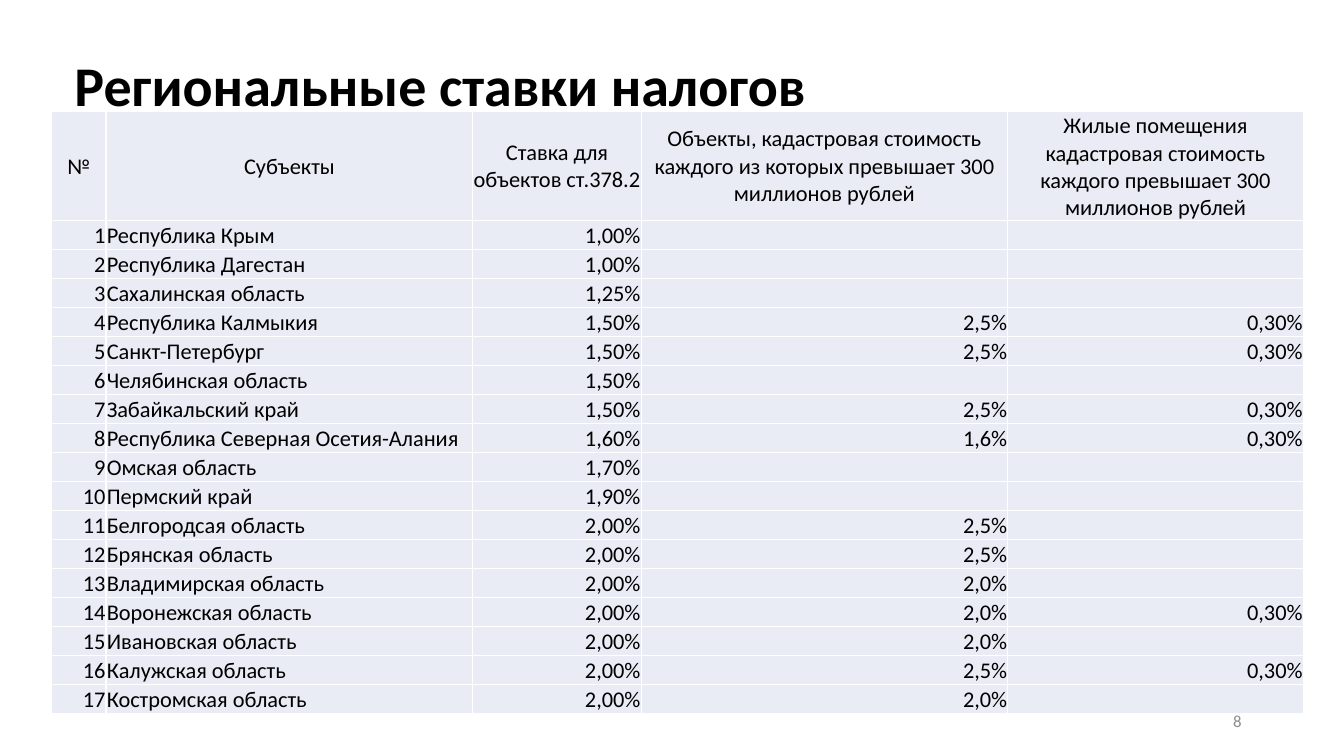
import pptx
import pptx.dml.color
import pptx.enum.text
import pptx.oxml.ns
import pptx.util
from lxml import etree

Pt = pptx.util.Pt
ALIGN = pptx.enum.text.PP_ALIGN
ANCHOR = pptx.enum.text.MSO_ANCHOR
qn = pptx.oxml.ns.qn

HEADERS = [
    "№",
    "Субъекты",
    "Ставка для объектов ст.378.2",
    "Объекты, кадастровая стоимость каждого из которых превышает 300 миллионов рублей",
    "Жилые помещения кадастровая стоимость каждого превышает 300 миллионов рублей",
]
RATES = [
    ("Республика Крым", "1,00%", "", ""),
    ("Республика Дагестан", "1,00%", "", ""),
    ("Сахалинская область", "1,25%", "", ""),
    ("Республика Калмыкия", "1,50%", "2,5%", "0,30%"),
    ("Санкт-Петербург", "1,50%", "2,5%", "0,30%"),
    ("Челябинская область", "1,50%", "", ""),
    ("Забайкальский край", "1,50%", "2,5%", "0,30%"),
    ("Республика Северная Осетия-Алания", "1,60%", "1,6%", "0,30%"),
    ("Омская область", "1,70%", "", ""),
    ("Пермский край", "1,90%", "", ""),
    ("Белгородсая область", "2,00%", "2,5%", ""),
    ("Брянская область", "2,00%", "2,5%", ""),
    ("Владимирская область", "2,00%", "2,0%", ""),
    ("Воронежская область", "2,00%", "2,0%", "0,30%"),
    ("Ивановская область", "2,00%", "2,0%", ""),
    ("Калужская область", "2,00%", "2,5%", "0,30%"),
    ("Костромская область", "2,00%", "2,0%", ""),
]
COLUMN_WIDTHS = [39, 262, 120.2, 262, 211]
COLUMN_ALIGNS = [ALIGN.RIGHT, ALIGN.LEFT, ALIGN.RIGHT, ALIGN.RIGHT, ALIGN.RIGHT]
HEADER_HEIGHT, ROW_HEIGHT = 77.8, 20.74


def color(value):
    """Turn a hex string into a colour."""
    return pptx.dml.color.RGBColor.from_string(value)


def write(frame, text, size=16, fill="000000", bold=False, align=ALIGN.LEFT):
    """Put one formatted paragraph into a text frame."""
    para = frame.paragraphs[0]
    para.alignment = align
    if not text:
        etree.SubElement(para._p, qn("a:endParaRPr"), sz=str(size * 100))
        return
    span = para.add_run()
    span.text = text
    span.font.name = "Calibri"
    span.font.size = Pt(size)
    span.font.bold = bold
    span.font.color.rgb = color(fill)


class Page:
    """Hold the table style and the current slide."""

    cell_fill = "E9EBF5"
    border = "FFFFFF"
    border_width = 1

    def __init__(self, deck):
        """Add a blank slide to the deck."""
        self.slide = deck.slides.add_slide(deck.slide_layouts[6])

    def text(self, text, left, top, width, height, anchor=ANCHOR.TOP, **style):
        """Add a wrapped text box."""
        box = self.slide.shapes.add_textbox(Pt(left), Pt(top), Pt(width), Pt(height))
        box.text_frame.word_wrap = True
        box.text_frame.vertical_anchor = anchor
        write(box.text_frame, text, **style)

    def cell(self, cell, text, anchor, align):
        """Fill, border and write one table cell."""
        cell.margin_left = cell.margin_right = cell.margin_top = Pt(0.5)
        cell.margin_bottom = Pt(0)
        cell.vertical_anchor = anchor
        write(cell.text_frame, text, align=align)
        properties = cell._tc.get_or_add_tcPr()
        for side in ("a:lnL", "a:lnR", "a:lnT", "a:lnB"):
            line = etree.SubElement(properties, qn(side), w=str(Pt(self.border_width)))
            solid = etree.SubElement(line, qn("a:solidFill"))
            etree.SubElement(solid, qn("a:srgbClr"), val=self.border)
        cell.fill.solid()
        cell.fill.fore_color.rgb = color(self.cell_fill)

    def table(self, rows, left, top, widths, heights, aligns):
        """Add a table whose first row is a centred header."""
        table = self.slide.shapes.add_table(
            len(rows), len(widths), Pt(left), Pt(top), Pt(sum(widths)), Pt(sum(heights))
        ).table
        for column, width in zip(table.columns, widths):
            column.width = Pt(width)
        for index, (row, height) in enumerate(zip(rows, heights)):
            table.rows[index].height = Pt(height)
            for position, text in enumerate(row):
                anchor = ANCHOR.BOTTOM if index else ANCHOR.MIDDLE
                align = aligns[position] if index else ALIGN.CENTER
                self.cell(table.cell(index, position), text, anchor, align)


def main():
    """Build and save the slide."""
    deck = pptx.Presentation()
    deck.slide_width, deck.slide_height = Pt(960), Pt(540)
    page = Page(deck)
    page.text("Региональные ставки налогов", 46, 32.4, 862.5, 55.4, size=40, bold=True)
    rows = [HEADERS] + [(str(number), *rate) for number, rate in enumerate(RATES, 1)]
    heights = [HEADER_HEIGHT] + [ROW_HEIGHT] * len(RATES)
    page.table(rows, 36.8, 79.7, COLUMN_WIDTHS, heights, COLUMN_ALIGNS)
    page.text("8", 678, 500.5, 216, 28.8, anchor=ANCHOR.MIDDLE,
              size=12, fill="8C8C8C", align=ALIGN.RIGHT)
    deck.save("out.pptx")


if __name__ == "__main__":
    main()
